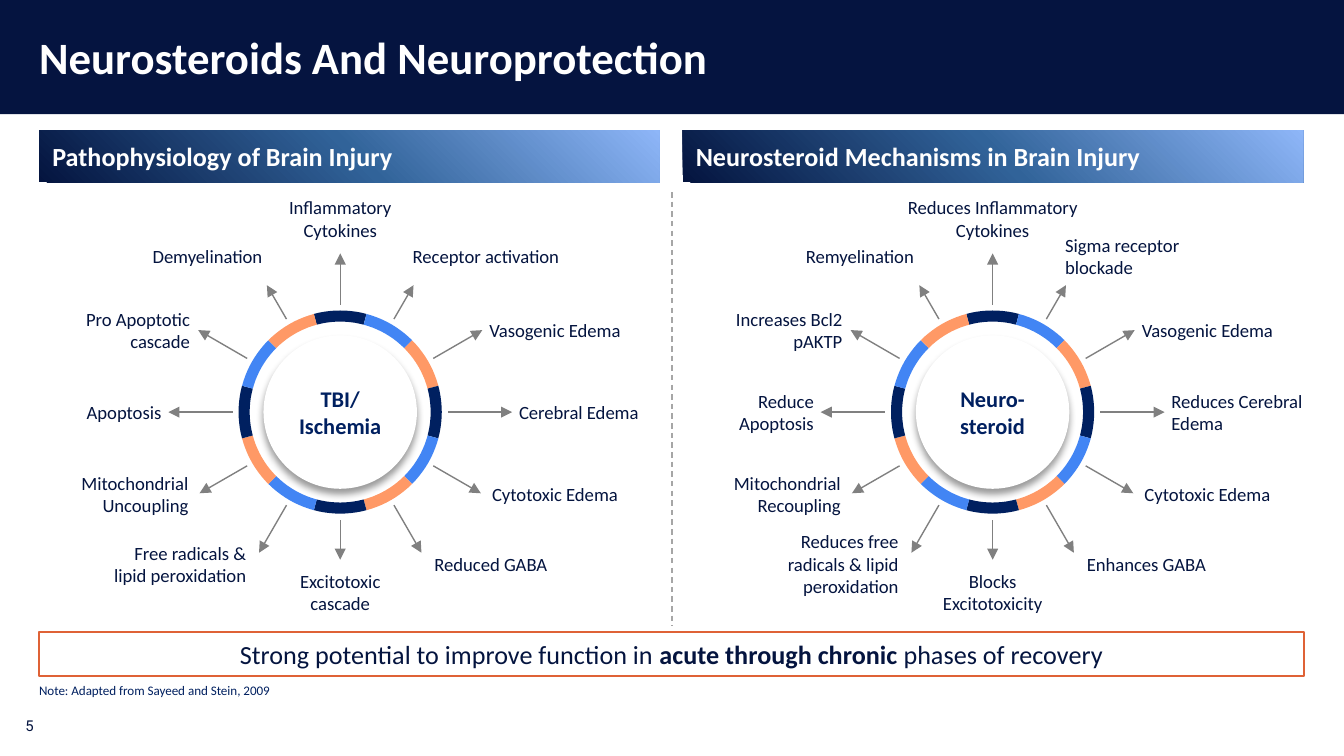
from dataclasses import dataclass
from math import cos, radians, sin

from pptx import Presentation
from pptx.dml.color import RGBColor
from pptx.enum import dml, shapes, text
from pptx.oxml import parse_xml
from pptx.oxml.ns import nsdecls, qn
from pptx.util import Cm, Pt

INK = RGBColor(0x04, 0x14, 0x3F)
BAND = RGBColor(0x05, 0x14, 0x40)
NAVY = RGBColor(0x00, 0x20, 0x60)
BLUE = RGBColor(0x42, 0x85, 0xF4)
ORANGE = RGBColor(0xFF, 0x99, 0x66)
RED = RGBColor(0xDF, 0x62, 0x36)
GRAY = RGBColor(0x80, 0x80, 0x80)
LIGHT_GRAY = RGBColor(0xA6, 0xA6, 0xA6)
WHITE = RGBColor(0xFF, 0xFF, 0xFF)

LEFT, CENTER, RIGHT = text.PP_ALIGN.LEFT, text.PP_ALIGN.CENTER, text.PP_ALIGN.RIGHT
MIDDLE, BOTTOM = text.MSO_ANCHOR.MIDDLE, text.MSO_ANCHOR.BOTTOM
MARGIN, PANEL_W = 0.74, 11.73
HUB_Y, HUB_R = 7.79, 1.45
RING_INNER, RING_OUTER, SPOKE_START = 1.71, 1.92, 2.03
LABEL_H = 0.81
STEP = 30  # degrees between neighbouring spokes


@dataclass
class Spoke:
    """One arrow and its label; x is the aligned edge, y the middle, from the hub."""
    tip: float
    x: float
    y: float
    width: float
    align: text.PP_ALIGN


@dataclass
class Panel:
    heading: str
    left: float
    hub_x: float
    hub_lines: list[str]
    top_width: float
    labels: list[str]


# Clockwise from the top
SPOKES = [
    Spoke(3.00, 0, -3.66, 2.13, CENTER),
    Spoke(2.77, 1.37, -2.95, 2.84, LEFT),
    Spoke(3.10, 2.82, -1.55, 2.69, LEFT),
    Spoke(3.25, 3.38, 0, 2.49, LEFT),
    Spoke(3.07, 2.87, 1.55, 2.49, LEFT),
    Spoke(3.07, 1.78, 2.87, 2.46, LEFT),
    Spoke(2.79, 0, 3.40, 2.13, CENTER),
    Spoke(3.07, -1.78, 2.87, 2.79, RIGHT),
    Spoke(3.07, -2.87, 1.55, 2.13, RIGHT),
    Spoke(3.25, -3.38, 0, 2.13, RIGHT),
    Spoke(3.10, -2.84, -1.55, 2.13, RIGHT),
    Spoke(2.77, -2.51, -2.95, 2.13, CENTER),
]

PANELS = [
    Panel("Pathophysiology of Brain Injury", MARGIN, 6.43, ["TBI/", "Ischemia"], 2.13,
          ["Inflammatory Cytokines", "Receptor activation", "Vasogenic Edema",
           "Cerebral Edema", "Cytotoxic Edema", "Reduced GABA",
           "Excitotoxic cascade", "Free radicals & lipid peroxidation",
           "Mitochondrial Uncoupling", "Apoptosis", "Pro Apoptotic cascade",
           "Demyelination"]),
    Panel("Neurosteroid Mechanisms in Brain Injury", 12.9, 18.76, ["Neuro-steroid"], 3.4,
          ["Reduces Inflammatory Cytokines", "Sigma receptor blockade", "Vasogenic Edema",
           "Reduces Cerebral Edema", "Cytotoxic Edema", "Enhances GABA",
           "Blocks Excitotoxicity", "Reduces free radicals & lipid peroxidation",
           "Mitochondrial Recoupling", "Reduce Apoptosis", "Increases Bcl2 pAKTP",
           "Remyelination"]),
]


def add_run(p, content: str, size: float, color: RGBColor, bold: bool = False,
            font: str = "Calibri") -> None:
    r = p.add_run()
    r.text = content
    r.font.name, r.font.size, r.font.bold = font, Pt(size), bold
    r.font.color.rgb = color


def set_frame(sp, align: text.PP_ALIGN, inset: float = 0, anchor=MIDDLE):
    """Prepare the text frame of a shape and return its first paragraph."""
    tf = sp.text_frame
    tf.word_wrap, tf.auto_size = True, text.MSO_AUTO_SIZE.NONE
    tf.vertical_anchor = anchor
    tf.margin_left = tf.margin_right = tf.margin_top = tf.margin_bottom = Cm(inset)
    p = tf.paragraphs[0]
    p.alignment = align
    return p


def add_box(s, kind, left: float, top: float, width: float, height: float):
    sp = s.shapes.add_shape(kind, Cm(left), Cm(top), Cm(width), Cm(height))
    sp.shadow.inherit = False
    sp.line.fill.background()
    return sp


def add_label(s, content: str, left: float, top: float, width: float, height: float,
              size: float, color: RGBColor, align=LEFT, anchor=MIDDLE,
              font: str = "Calibri") -> None:
    sp = s.shapes.add_textbox(Cm(left), Cm(top), Cm(width), Cm(height))
    add_run(set_frame(sp, align, anchor=anchor), content, size, color, font=font)


def add_line(s, x1: float, y1: float, x2: float, y2: float, color: RGBColor):
    sp = s.shapes.add_connector(shapes.MSO_CONNECTOR.STRAIGHT,
                                Cm(x1), Cm(y1), Cm(x2), Cm(y2))
    sp.line.color.rgb, sp.line.width = color, Pt(0.75)
    sp._element.spPr.append(parse_xml(f"<a:effectLst {nsdecls('a')}/>"))
    return sp


def polar(cx: float, angle: float, radius: float) -> tuple[float, float]:
    return cx + radius * cos(radians(angle)), HUB_Y - radius * sin(radians(angle))


def add_heading(s, panel: Panel) -> None:
    sp = add_box(s, shapes.MSO_SHAPE.RECTANGLE, panel.left, 2.46, PANEL_W, 0.99)
    stops = "".join(f'<a:gs pos="{pos}"><a:srgbClr val="{color}"/></a:gs>'
                    for pos, color in ((0, "8EB6F8"), (49000, "316399"), (100000, INK)))
    sp._element.spPr.find(qn("a:prstGeom")).addnext(parse_xml(
        f'<a:gradFill {nsdecls("a")}><a:gsLst>{stops}</a:gsLst><a:path path="circle">'
        '<a:fillToRect l="100000" b="100000"/></a:path></a:gradFill>'))
    add_run(set_frame(sp, LEFT, 0.25), panel.heading, 14, WHITE, True)


def add_arrow(s, cx: float, angle: float, tip: float) -> None:
    sp = add_line(s, *polar(cx, angle, tip), *polar(cx, angle, SPOKE_START), GRAY)
    ln = sp.line._get_or_add_ln()
    ln.append(parse_xml(f'<a:headEnd {nsdecls("a")} type="triangle"/>'))


def add_hub(s, panel: Panel) -> None:
    sp = add_box(s, shapes.MSO_SHAPE.OVAL, panel.hub_x - HUB_R, HUB_Y - HUB_R,
                 2 * HUB_R, 2 * HUB_R)
    sp.fill.solid()
    sp.fill.fore_color.rgb = WHITE
    sp._element.spPr.find(qn("a:effectLst")).append(parse_xml(
        f'<a:outerShdw {nsdecls("a")} blurRad="50800" dist="38100" dir="5400000">'
        '<a:srgbClr val="000000"><a:alpha val="40000"/></a:srgbClr></a:outerShdw>'))
    p = set_frame(sp, CENTER)
    for i, line in enumerate(panel.hub_lines):
        if i:
            p.add_line_break()
        add_run(p, line, 12, NAVY, True)


def add_ring_segment(s, cx: float, angle: float, color: RGBColor) -> None:
    sweep = [angle + d for d in range(-STEP // 2, STEP // 2 + 1, 3)]
    points = ([polar(cx, a, RING_OUTER) for a in sweep]
              + [polar(cx, a, RING_INNER) for a in reversed(sweep)])
    start, *rest = [(Cm(x), Cm(y)) for x, y in points]
    builder = s.shapes.build_freeform(*start)
    builder.add_line_segments(rest, close=True)
    sp = builder.convert_to_shape()
    sp.shadow.inherit = False
    sp.fill.solid()
    sp.fill.fore_color.rgb = color
    sp.line.fill.background()


def add_panel(s, panel: Panel) -> None:
    add_heading(s, panel)
    add_hub(s, panel)
    for i, (spoke, label) in enumerate(zip(SPOKES, panel.labels)):
        angle = 90 - STEP * i
        add_arrow(s, panel.hub_x, angle, spoke.tip)
        add_ring_segment(s, panel.hub_x, angle, (NAVY, BLUE, ORANGE)[i % 3])
        width = spoke.width if i else panel.top_width
        shift = {LEFT: 0, CENTER: width / 2, RIGHT: width}[spoke.align]
        add_label(s, label, panel.hub_x + spoke.x - shift, HUB_Y + spoke.y - LABEL_H / 2,
                  width, LABEL_H, 10, INK, spoke.align)


def main() -> None:
    prs = Presentation()
    prs.slide_width, prs.slide_height = Cm(25.4), Cm(14.29)
    s = prs.slides.add_slide(prs.slide_layouts[5])

    # Title band, with the title in front of it
    band = add_box(s, shapes.MSO_SHAPE.RECTANGLE, 0, 0, 25.4, 2.16)
    band.fill.solid()
    band.fill.fore_color.rgb = BAND
    title = s.shapes.title
    s.shapes._spTree.append(title._element)
    title.left, title.top, title.width, title.height = Cm(MARGIN), Cm(0.56), Cm(23.9), Cm(1.02)
    add_run(set_frame(title, LEFT), "Neurosteroids And Neuroprotection", 24, WHITE, True)

    # Two wheels and the divider between them
    for panel in PANELS:
        add_panel(s, panel)
    divider = add_line(s, 12.7, 3.63, 12.7, 11.84, LIGHT_GRAY)
    divider.line.dash_style = dml.MSO_LINE.DASH

    # Conclusion
    box = add_box(s, shapes.MSO_SHAPE.RECTANGLE, MARGIN, 11.94, 23.9, 0.84)
    box.fill.background()
    box.line.color.rgb, box.line.width = RED, Pt(1)
    p = set_frame(box, CENTER)
    add_run(p, "Strong potential to improve function in ", 14, INK)
    add_run(p, "acute through chronic ", 14, INK, True)
    add_run(p, "phases of recovery", 14, INK)

    # Note and page number
    add_label(s, "Note: Adapted from Sayeed and Stein, 2009", MARGIN, 12.9, 5.49, 0.3,
              7, NAVY, anchor=BOTTOM)
    add_label(s, "5", 0, 13.18, 1.12, 1.07, 8, INK, CENTER, font="Roboto")
    prs.save("out.pptx")


if __name__ == "__main__":
    main()
